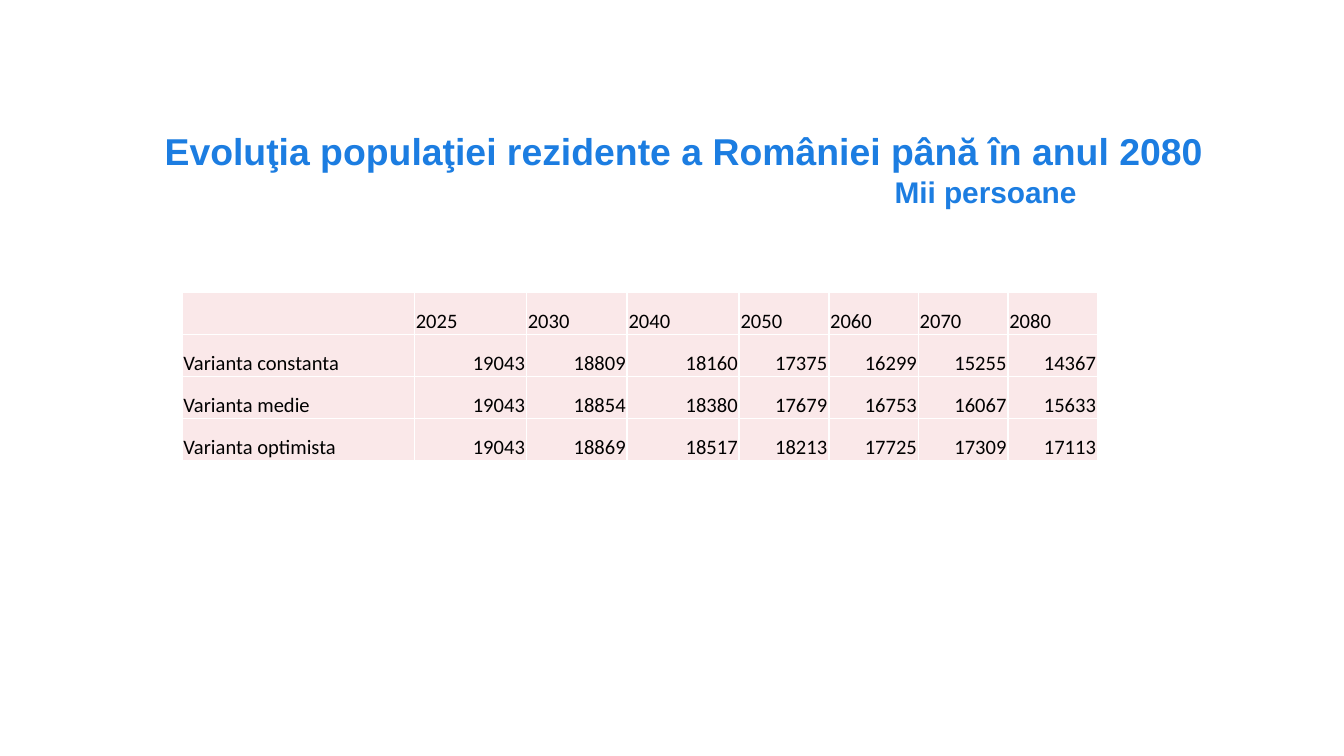
"""Builds a slide with Romania's resident population projections to 2080."""
from dataclasses import dataclass
from lxml.etree import SubElement as Sub
from pptx import Presentation as Deck
from pptx.dml.color import RGBColor as Rgb
from pptx.enum.text import MSO_ANCHOR as Anchor, MSO_AUTO_SIZE as Fit, PP_ALIGN as Align
from pptx.oxml.ns import qn
from pptx.util import Pt

PX = 9525


@dataclass(frozen=True)
class Theme:
    blue: str = "1C7DE1"
    pink: str = "FAE8E9"
    white: str = "FFFFFF"
    black: str = "000000"
    head: str = "Arial"
    body: str = "Calibri"
    big: int = 20
    mid: int = 16
    small: int = 11
    rule: int = 1


class Page:
    def __init__(self, deck, theme):
        self.theme = theme
        self.slide = deck.slides.add_slide(deck.slide_layouts[5])

    def style(self, para, face, size, color, bold=False):
        for run in para.runs:
            font = run.font
            font.name, font.size, font.bold = face, Pt(size), bold
            font.color.rgb = Rgb.from_string(color)

    def title(self, x, y, w, h, text, unit, shift):
        look = self.theme
        shape = self.slide.shapes.title
        shape.left, shape.top, shape.width, shape.height = (n * PX for n in (x, y, w, h))
        frame = shape.text_frame
        frame.word_wrap = True
        frame.auto_size = Fit.SHAPE_TO_FIT_TEXT
        frame.vertical_anchor = Anchor.TOP
        frame.text = f"{text}\n{unit}"
        for para, size in zip(frame.paragraphs, (look.big, look.mid)):
            para.alignment = Align.CENTER
            self.style(para, look.head, size, look.blue, True)
        frame.paragraphs[1]._p.get_or_add_pPr().set("marL", str(shift * PX))

    def border(self, cell):
        props = cell._tc.get_or_add_tcPr()
        for side in ("a:lnL", "a:lnR", "a:lnT", "a:lnB"):
            line = Sub(props, qn(side), w=str(Pt(self.theme.rule)))
            Sub(Sub(line, qn("a:solidFill")), qn("a:srgbClr"), val=self.theme.white)

    def cell(self, cell, value, align):
        look = self.theme
        self.border(cell)
        cell.fill.solid()
        cell.fill.fore_color.rgb = Rgb.from_string(look.pink)
        cell.margin_left = cell.margin_right = cell.margin_top = PX
        cell.margin_bottom = 0
        cell.vertical_anchor = Anchor.BOTTOM
        para = cell.text_frame.paragraphs[0]
        para.text = str(value)
        para.alignment = align
        self.style(para, look.body, look.small, look.black)

    def table(self, x, y, cols, high, rows):
        size = (sum(cols) * PX, high * len(rows) * PX)
        grid = self.slide.shapes.add_table(len(rows), len(cols), x * PX, y * PX, *size).table
        for col, wide in zip(grid.columns, cols):
            col.width = wide * PX
        for r, row in enumerate(rows):
            grid.rows[r].height = high * PX
            for c, value in enumerate(row):
                align = Align.RIGHT if r and c else Align.LEFT
                self.cell(grid.cell(r, c), value, align)


def main():
    deck = Deck()
    deck.slide_width, deck.slide_height = 960 * PX, 540 * PX
    page = Page(deck, Theme())
    page.title(46, 87, 893, 378, "Evoluţia populaţiei rezidente a României până în anul 2080 ",
               "Mii persoane", 423)
    rows = [
        ("", 2025, 2030, 2040, 2050, 2060, 2070, 2080),
        ("Varianta constanta", 19043, 18809, 18160, 17375, 16299, 15255, 14367),
        ("Varianta medie", 19043, 18854, 18380, 17679, 16753, 16067, 15633),
        ("Varianta optimista", 19043, 18869, 18517, 18213, 17725, 17309, 17113),
    ]
    page.table(130, 209, [166, 80, 72, 80] + [64] * 4, 30, rows)
    deck.save("out.pptx")


if __name__ == "__main__":
    main()
